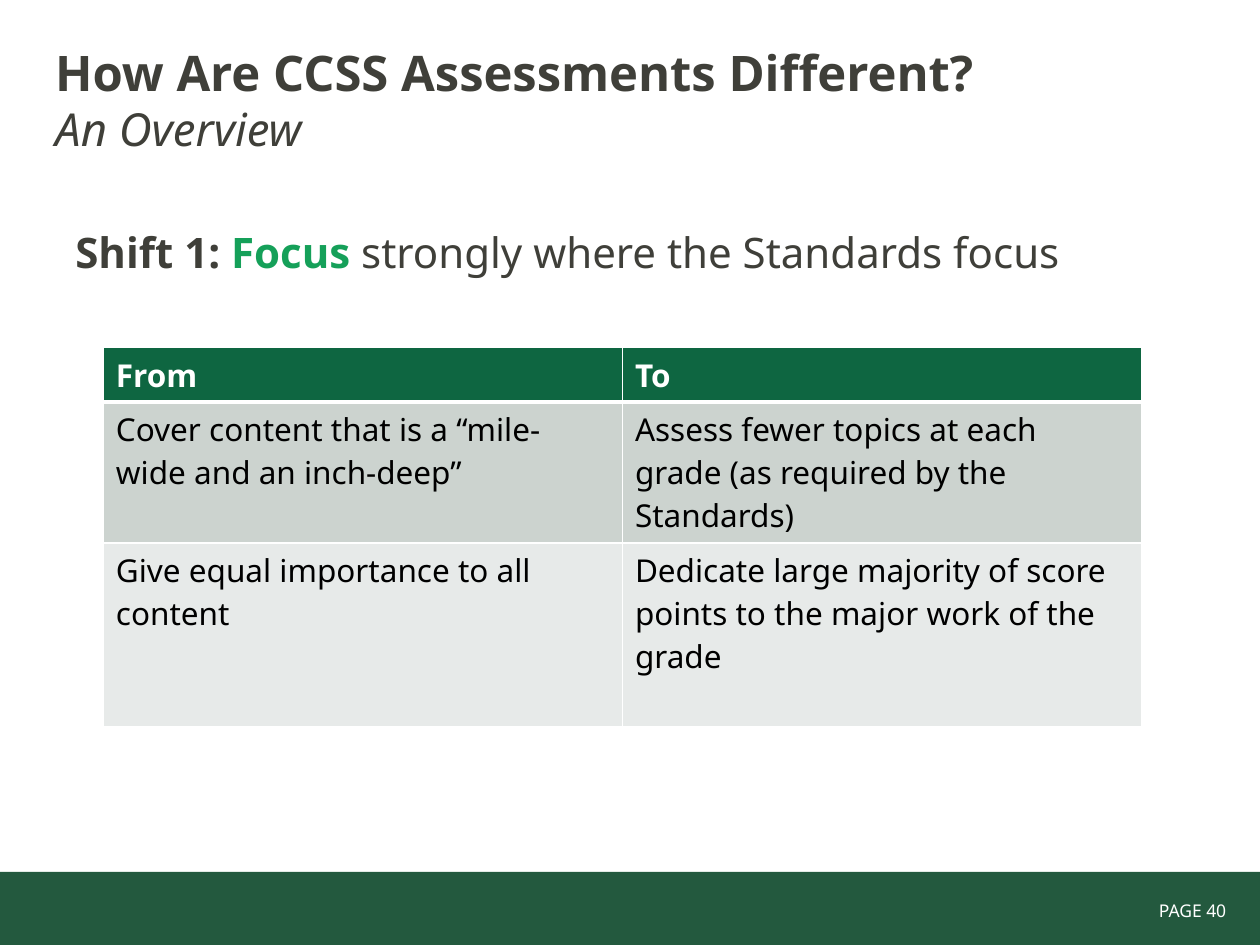
from dataclasses import dataclass

import pptx
import pptx.dml.color
import pptx.enum.shapes
import pptx.enum.text
import pptx.oxml
import pptx.oxml.ns
import pptx.util

Inches = pptx.util.Inches
FONT = "Noto Sans"
COLORS = {
    "footer": "23593E",
    "text": "3F3F39",
    "accent": "15A059",
    "header": "0E6641",
    "band_dark": "CCD3CF",
    "band_light": "E7EAE9",
    "white": "FFFFFF",
    "black": "000000",
}


@dataclass
class Span:
    text: str
    size: float
    color: str = "text"
    bold: bool = False
    italic: bool = False


@dataclass
class TextBox:
    left: float
    top: float
    width: float
    height: float
    paragraphs: list[list[Span]]
    anchor: pptx.enum.text.MSO_ANCHOR = pptx.enum.text.MSO_ANCHOR.TOP
    align: pptx.enum.text.PP_ALIGN = pptx.enum.text.PP_ALIGN.LEFT


@dataclass
class TableRow:
    cells: tuple[str, str]
    height: float
    fill: str
    color: str = "black"
    bold: bool = False
    bottom: float = 1


TEXT_BOXES = [
    TextBox(0.34, 0.16, 9, 1.25, [
        [Span("How Are CCSS Assessments Different?", 28, bold=True)],
        [Span("An Overview", 26, italic=True)],
    ], anchor=pptx.enum.text.MSO_ANCHOR.MIDDLE),
    TextBox(0.5, 1.75, 9, 0.6, [[
        Span("Shift 1: ", 24, bold=True),
        Span("Focus ", 24, "accent", bold=True),
        Span("strongly where the Standards focus", 24),
    ]]),
    TextBox(8.28, 7.09, 1.55, 0.27, [[Span("PAGE 40", 10, "white")]],
            align=pptx.enum.text.PP_ALIGN.RIGHT),
]

TABLE_ROWS = [
    TableRow(("From", "To"), 0.43, "header", "white", True, 3),
    TableRow(("Cover content that is a “mile-wide and an inch-deep”",
              "Assess fewer topics at each grade (as required by the Standards)"),
             1.12, "band_dark"),
    TableRow(("Give equal importance to all content",
              "Dedicate large majority of score points to the major work of the grade"),
             1.46, "band_light"),
]


def rgb(name: str) -> pptx.dml.color.RGBColor:
    """Return the named colour."""
    return pptx.dml.color.RGBColor.from_string(COLORS[name])


def format_run(r, span: Span) -> None:
    """Apply the font settings of a span to a run."""
    r.font.name = FONT
    r.font.size = pptx.util.Pt(span.size)
    r.font.bold = span.bold
    r.font.italic = span.italic
    r.font.color.rgb = rgb(span.color)


def draw_footer(s) -> None:
    """Draw the band along the bottom edge."""
    sp = s.shapes.add_shape(pptx.enum.shapes.MSO_SHAPE.RECTANGLE,
                            Inches(0), Inches(6.92), Inches(10), Inches(0.58))
    sp.shadow.inherit = False
    sp.fill.solid()
    sp.fill.fore_color.rgb = rgb("footer")
    sp.line.fill.background()


def draw_text(s, box: TextBox) -> None:
    """Draw a text box with formatted spans."""
    sp = s.shapes.add_textbox(Inches(box.left), Inches(box.top),
                              Inches(box.width), Inches(box.height))
    tf = sp.text_frame
    tf.word_wrap = True
    tf.vertical_anchor = box.anchor
    for i, spans in enumerate(box.paragraphs):
        p = tf.add_paragraph() if i else tf.paragraphs[0]
        p.alignment = box.align
        for span in spans:
            r = p.add_run()
            r.text = span.text
            format_run(r, span)


def set_borders(cell, top: float, bottom: float) -> None:
    """Give a cell white borders with the widths in points."""
    tc_pr = cell._tc.get_or_add_tcPr()
    for side, width in (("L", 1), ("R", 1), ("T", top), ("B", bottom)):
        tc_pr.append(pptx.oxml.parse_xml(
            f'<a:ln{side} {pptx.oxml.ns.nsdecls("a")} w="{pptx.util.Pt(width)}">'
            f'<a:solidFill><a:srgbClr val="{COLORS["white"]}"/></a:solidFill>'
            f'</a:ln{side}>'))


def draw_table(s, rows: list[TableRow]) -> None:
    """Draw the comparison table."""
    table = s.shapes.add_table(len(rows), 2, Inches(0.82), Inches(2.76), Inches(8.24),
                               Inches(sum(row.height for row in rows))).table
    top = 1
    for i, row in enumerate(rows):
        table.rows[i].height = Inches(row.height)
        for j, text in enumerate(row.cells):
            cell = table.cell(i, j)
            set_borders(cell, top, row.bottom)
            cell.fill.solid()
            cell.fill.fore_color.rgb = rgb(row.fill)
            cell.text_frame.text = text
            format_run(cell.text_frame.paragraphs[0].runs[0],
                       Span(text, 18, row.color, row.bold))
        top = row.bottom


def main() -> None:
    """Build and save the slide."""
    prs = pptx.Presentation()
    prs.slide_width, prs.slide_height = Inches(10), Inches(7.5)
    s = prs.slides.add_slide(prs.slide_layouts[6])
    draw_footer(s)
    for box in TEXT_BOXES:
        draw_text(s, box)
    draw_table(s, TABLE_ROWS)
    prs.save("out.pptx")


if __name__ == "__main__":
    main()
